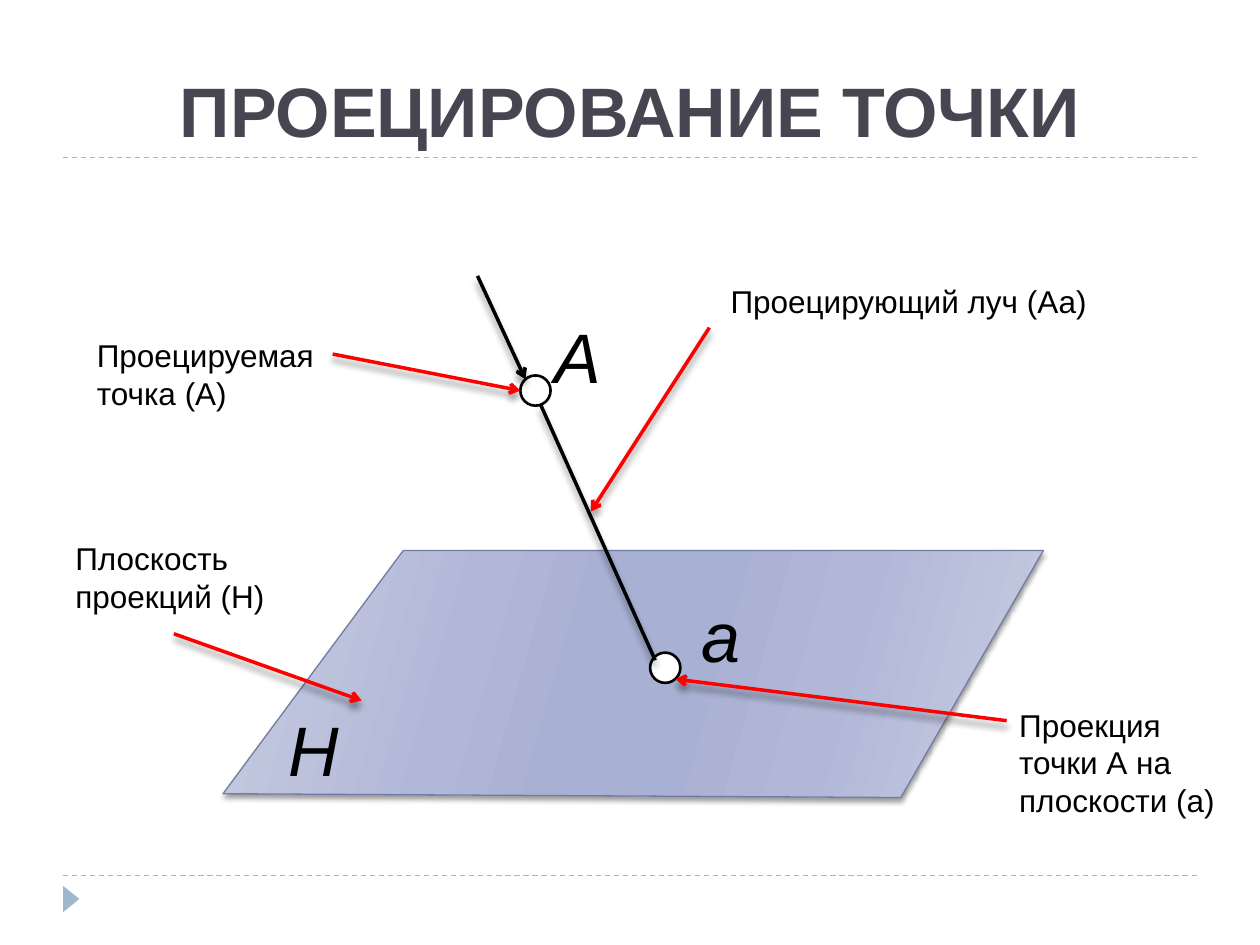
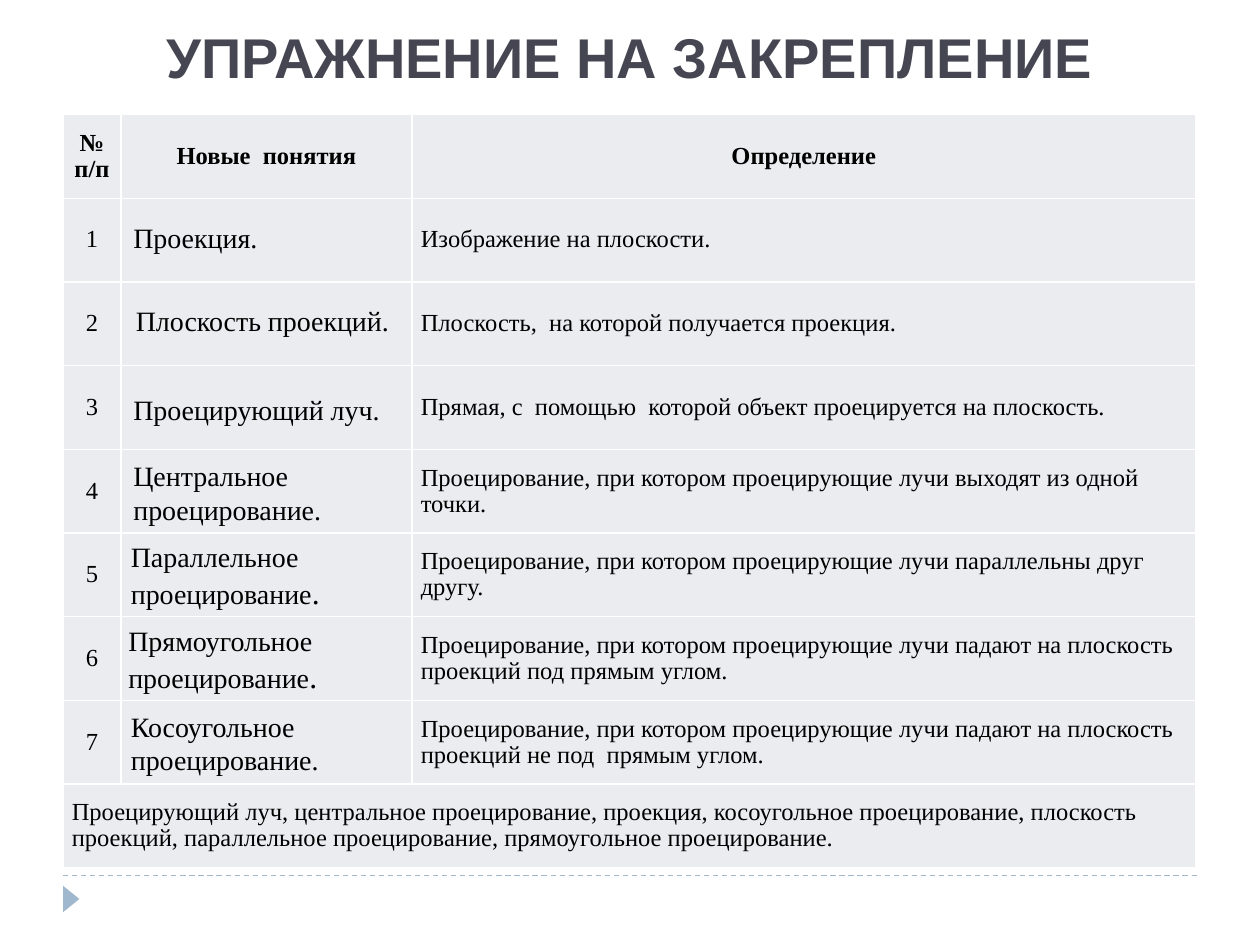
"""Build two slides on projecting a point: a labelled diagram and a table of terms."""
from dataclasses import dataclass

from lxml.etree import SubElement
from pptx import Presentation
from pptx.dml.color import RGBColor
from pptx.enum.dml import MSO_LINE
from pptx.enum.shapes import MSO_CONNECTOR, MSO_SHAPE
from pptx.enum.text import MSO_ANCHOR, PP_ALIGN
from pptx.oxml.ns import qn
from pptx.util import Inches, Pt


@dataclass(frozen=True)
class Theme:
    sans: str = "Arial"
    serif: str = "Times New Roman"
    title: str = "464653"
    ink: str = "000000"
    paper: str = "FFFFFF"
    accent: str = "9FB8CD"
    pointer: str = "FF0000"
    plane_edge: str = "727CA3"
    cell: str = "EBECF0"
    mark_size: int = 40
    label_size: int = 18
    term_size: int = 16
    table_size: int = 14
    table_spacing: float = 0.96


THEME = Theme()
MARGIN, CONTENT_WIDTH, TITLE_TOP = 0.5, 9, 0.17
HEADER_RULE, FOOTER_RULE = 1.25, 6.95

POINT_TITLE = ("ПРОЕЦИРОВАНИЕ ТОЧКИ", 40, 1.08)
PLANE = [(3.2, 4.37), (8.28, 4.37), (7.15, 6.33), (1.77, 6.3)]
PLANE_STOPS = [(0, "C9CDE2"), (30, "B1B7D7"), (45, "A8B0D3"),
               (55, "A8B0D3"), (73, "B1B7D7"), (100, "C9CDE2")]
PLANE_ANGLE = 16
PLANE_SHADOW, LINE_SHADOW = (3, 2), (4, 3.4)
POINT_SIZE = 0.24
POINTS = [(4.13, 2.98), (5.16, 5.18)]
RAYS = [((3.79, 2.19), (4.17, 3.01), True), ((4.29, 3.21), (5.2, 5.24), False)]
MARKS = [("а", 5.47, 4.65), ("А", 4.3, 2.44), ("H", 2.19, 5.56)]
CALLOUTS = [
    ("Плоскость проекций (H)", (0.5, 4.23, 2.13, 0.71), (1.38, 5.03), (2.87, 5.56)),
    ("Проецирующий луч (Аа)", (5.7, 2.19, 3.56, 0.4), (5.63, 2.6), (4.69, 4.06)),
    ("Проецируемая точка (А)", (0.67, 2.62, 2.06, 0.71), (2.64, 2.81), (4.13, 3.1)),
    ("Проекция точки А на плоскости (а)", (7.99, 5.55, 1.89, 1.01), (7.99, 5.72), (5.36, 5.39)),
]

EXERCISE_TITLE = ("УПРАЖНЕНИЕ НА ЗАКРЕПЛЕНИЕ", 32, 0.59)
HEADINGS = [["№", "п/п"], ["Новые  понятия"], ["Определение"]]
DEFINITIONS = [
    "Изображение на плоскости.",
    "Плоскость,  на которой получается проекция.",
    "Прямая, с  помощью  которой объект проецируется на плоскость.",
    "Проецирование, при котором проецирующие лучи выходят из одной точки.",
    "Проецирование, при котором проецирующие лучи параллельны друг другу.",
    "Проецирование, при котором проецирующие лучи падают на плоскость проекций под прямым углом.",
    "Проецирование, при котором проецирующие лучи падают на плоскость проекций не под  прямым углом.",
]
WORD_BANK = ("Проецирующий луч, центральное проецирование, проекция, косоугольное "
             "проецирование, плоскость проекций, параллельное проецирование, "
             "прямоугольное проецирование.")
COLUMNS = [0.46, 2.31, 6.22]
TABLE_TOP, TABLE_HEIGHT = 0.91, 5.98
TERM_WIDTH = 2.31
TERMS = [
    ("Проекция", 16, 0.96, 1.7, 0.37),
    ("Плоскость проекций", 16, 0.98, 2.36, 0.37),
    ("Проецирующий луч", 16, 0.96, 3.07, 0.37),
    ("Центральное проецирование", 16, 0.96, 3.59, 0.64),
    ("Параллельное проецирование", 18, 0.94, 4.23, 0.67),
    ("Прямоугольное проецирование", 18, 0.92, 4.9, 0.67),
    ("Косоугольное проецирование", 16, 0.94, 5.58, 0.64),
]


def rgb(colour):
    return RGBColor.from_string(colour)


def inches(lengths):
    return [Inches(length) for length in lengths]


def add_run(paragraph, text, size, font, colour=THEME.ink, bold=False, italic=False):
    run = paragraph.add_run()
    run.text = text
    run.font.size, run.font.name = Pt(size), font
    run.font.bold, run.font.italic = bold, italic
    run.font.color.rgb = rgb(colour)


def add_text(shapes, box):
    frame = shapes.add_textbox(*inches(box)).text_frame
    frame.word_wrap = True
    return frame


def set_effects(shape, shadow=None):
    effects = SubElement(shape._element.spPr, qn("a:effectLst"))
    if shadow:
        blur, distance = shadow
        outer = SubElement(effects, qn("a:outerShdw"), blurRad=str(Pt(blur)),
                           dist=str(Pt(distance)), dir="5400000", rotWithShape="0")
        black = SubElement(outer, qn("a:srgbClr"), val=THEME.ink)
        SubElement(black, qn("a:alpha"), val="40000")


def add_line(shapes, start, end, colour, width, dash=None, arrow=False, shadow=None):
    line = shapes.add_connector(MSO_CONNECTOR.STRAIGHT, *inches(start + end))
    line.line.color.rgb, line.line.width = rgb(colour), Pt(width)
    if dash:
        line.line.dash_style = dash
    if arrow:
        SubElement(line.line._get_or_add_ln(), qn("a:tailEnd"), type="arrow")
    set_effects(line, shadow)


def add_rule(slide, top):
    add_line(slide.shapes, (MARGIN, top), (MARGIN + CONTENT_WIDTH, top),
             THEME.accent, 0.75, dash=MSO_LINE.DASH)


def add_base(deck, title):
    slide = deck.slides.add_slide(deck.slide_layouts[6])
    add_rule(slide, FOOTER_RULE)
    marker = slide.shapes.add_shape(MSO_SHAPE.ISOSCELES_TRIANGLE, *inches((0.46, 7.07, 0.21, 0.13)))
    marker.rotation = 90
    marker.shadow.inherit = False
    marker.fill.solid()
    marker.fill.fore_color.rgb = rgb(THEME.accent)
    marker.line.fill.background()
    text, size, height = title
    frame = add_text(slide.shapes, (MARGIN, TITLE_TOP, CONTENT_WIDTH, height))
    frame.vertical_anchor = MSO_ANCHOR.BOTTOM
    frame.paragraphs[0].alignment = PP_ALIGN.CENTER
    add_run(frame.paragraphs[0], text, size, THEME.sans, THEME.title, bold=True)
    return slide


def add_plane(shapes):
    builder = shapes.build_freeform(*inches(PLANE[0]))
    builder.add_line_segments([inches(corner) for corner in PLANE[1:]], close=True)
    plane = builder.convert_to_shape()
    plane.fill.gradient()
    plane.fill.gradient_angle = 360 - PLANE_ANGLE
    stops = plane._element.spPr.find(qn("a:gradFill")).find(qn("a:gsLst"))
    for stop in list(stops):
        stops.remove(stop)
    for position, colour in PLANE_STOPS:
        stop = SubElement(stops, qn("a:gs"), pos=str(position * 1000))
        SubElement(stop, qn("a:srgbClr"), val=colour)
    plane.line.color.rgb, plane.line.width = rgb(THEME.plane_edge), Pt(0.75)
    set_effects(plane, PLANE_SHADOW)


def add_diagram(slide):
    diagram = slide.shapes.add_group_shape().shapes
    add_plane(diagram)
    for corner in POINTS:
        point = diagram.add_shape(MSO_SHAPE.OVAL, *inches(corner + (POINT_SIZE, POINT_SIZE)))
        point.shadow.inherit = False
        point.fill.solid()
        point.fill.fore_color.rgb = rgb(THEME.paper)
        point.line.color.rgb, point.line.width = rgb(THEME.ink), Pt(1.5)
    for start, end, arrow in RAYS:
        add_line(diagram, start, end, THEME.ink, 2, arrow=arrow, shadow=LINE_SHADOW)
    for letter, left, top in MARKS:
        frame = add_text(diagram, (left, top, 0.45, 0.77))
        add_run(frame.paragraphs[0], letter, THEME.mark_size, THEME.sans, italic=True)


def add_callouts(slide):
    for label, box, start, end in CALLOUTS:
        add_line(slide.shapes, start, end, THEME.pointer, 2, arrow=True, shadow=LINE_SHADOW)
        frame = add_text(slide.shapes, box)
        add_run(frame.paragraphs[0], label, THEME.label_size, THEME.sans)


def style_cell(cell):
    properties = cell._tc.get_or_add_tcPr()
    for side in ("a:lnL", "a:lnR", "a:lnT", "a:lnB"):
        border = SubElement(properties, qn(side), w=str(Pt(1)))
        SubElement(SubElement(border, qn("a:solidFill")), qn("a:srgbClr"), val=THEME.paper)
    cell.fill.solid()
    cell.fill.fore_color.rgb = rgb(THEME.cell)
    cell.vertical_anchor = MSO_ANCHOR.MIDDLE
    cell.margin_left = cell.margin_right = Inches(0.07)
    cell.margin_top = cell.margin_bottom = 0


def fill_cell(cell, lines, centred=False, bold=False):
    frame = cell.text_frame
    for index, line in enumerate(lines):
        paragraph = frame.add_paragraph() if index else frame.paragraphs[0]
        paragraph.alignment = PP_ALIGN.CENTER if centred else PP_ALIGN.LEFT
        paragraph.line_spacing = THEME.table_spacing
        add_run(paragraph, line, THEME.table_size, THEME.serif, bold=bold)


def add_definitions(slide):
    row_count = len(DEFINITIONS) + 2
    table = slide.shapes.add_table(row_count, len(COLUMNS), *inches(
        (MARGIN, TABLE_TOP, CONTENT_WIDTH, TABLE_HEIGHT))).table
    table.first_row = table.horz_banding = False
    for column, width in zip(table.columns, COLUMNS):
        column.width = Inches(width)
    for row in table.rows:
        row.height = Inches(TABLE_HEIGHT / row_count)
        for cell in row.cells:
            style_cell(cell)
    for index, heading in enumerate(HEADINGS):
        fill_cell(table.cell(0, index), heading, centred=True, bold=True)
    for number, definition in enumerate(DEFINITIONS, 1):
        fill_cell(table.cell(number, 0), [str(number)], centred=True)
        fill_cell(table.cell(number, 2), [definition])
    last = row_count - 1
    table.cell(last, 0).merge(table.cell(last, len(COLUMNS) - 1))
    fill_cell(table.cell(last, 0), [WORD_BANK])


def add_terms(slide):
    for term, stop_size, left, top, height in TERMS:
        paragraph = add_text(slide.shapes, (left, top, TERM_WIDTH, height)).paragraphs[0]
        add_run(paragraph, term, THEME.term_size, THEME.serif)
        add_run(paragraph, ".", stop_size, THEME.serif)


def main():
    deck = Presentation()
    deck.slide_width, deck.slide_height = Inches(10), Inches(7.5)
    projection = add_base(deck, POINT_TITLE)
    add_rule(projection, HEADER_RULE)
    add_diagram(projection)
    add_callouts(projection)
    exercise = add_base(deck, EXERCISE_TITLE)
    add_definitions(exercise)
    add_terms(exercise)
    deck.save("out.pptx")


if __name__ == "__main__":
    main()
